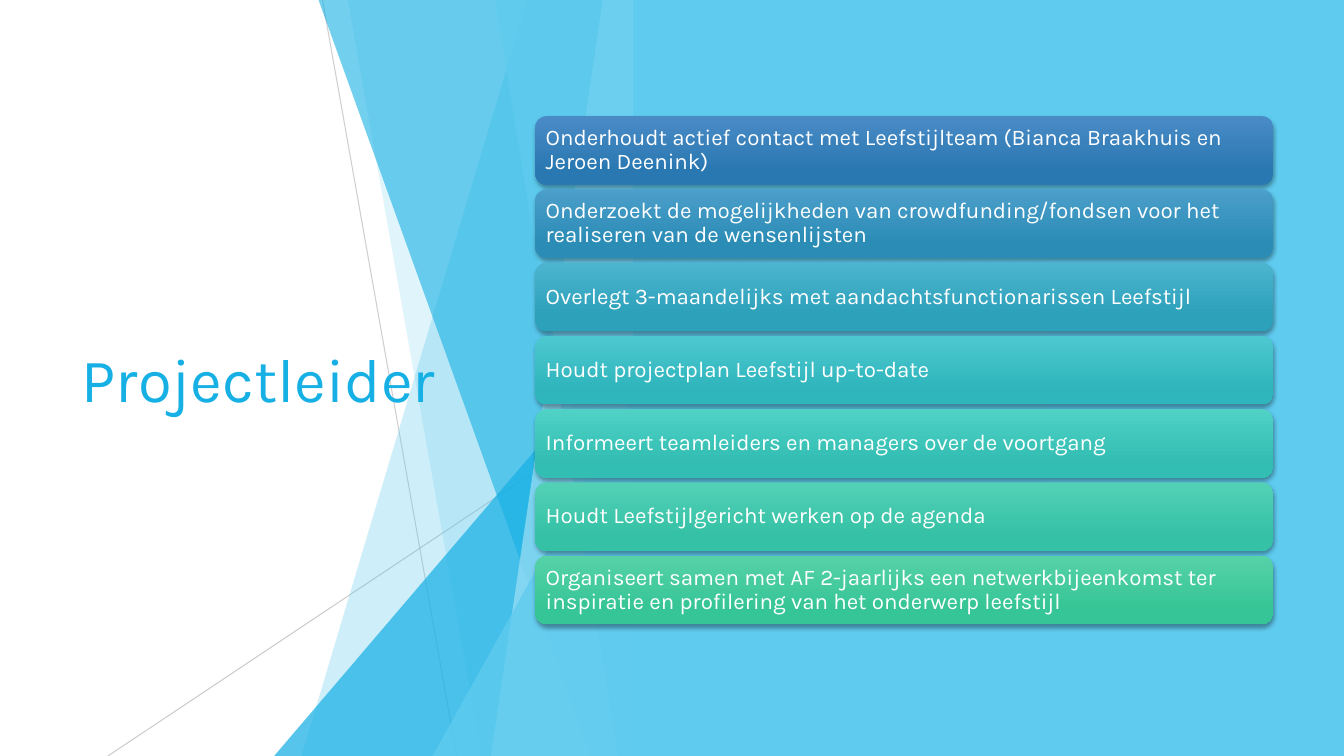
from dataclasses import dataclass

from lxml.etree import SubElement
from pptx import Presentation
from pptx.dml.color import RGBColor
from pptx.enum.shapes import MSO_CONNECTOR, MSO_SHAPE
from pptx.enum.text import MSO_ANCHOR, MSO_AUTO_SIZE, PP_ALIGN
from pptx.oxml.ns import qn
from pptx.shapes.autoshape import Shape
from pptx.shapes.base import BaseShape
from pptx.slide import Slide
from pptx.text.text import TextFrame
from pptx.util import Inches, Pt

SLIDE_WIDTH, SLIDE_HEIGHT = Inches(13.333), Inches(7.5)
FACET_EDGE = 47.1


@dataclass(frozen=True)
class Theme:
    font: str = "Karla"
    title_size: int = 44
    duty_size: int = 16
    hairline: float = 0.75
    sky: str = "5FCBEF"
    azure: str = "17B0E4"
    mist: str = "9FE0F5"
    silver: str = "BFBFBF"
    white: str = "FFFFFF"
    shade: str = "000000"


THEME = Theme()


def column(percent: float) -> int:
    return round(SLIDE_WIDTH * percent / 100)


def row(percent: float) -> int:
    return round(SLIDE_HEIGHT * percent / 100)


def rgb(color: str) -> RGBColor:
    return RGBColor.from_string(color)


def set_opacity(shape: BaseShape, percent: int) -> None:
    for color in shape.element.spPr.iter(qn("a:srgbClr")):
        SubElement(color, qn("a:alpha"), val=str(percent * 1000))


def paint(shape: Shape, color: str, opacity: int = 100) -> None:
    shape.shadow.inherit = False
    shape.line.fill.background()
    shape.fill.solid()
    shape.fill.fore_color.rgb = rgb(color)
    if opacity < 100:
        set_opacity(shape, opacity)


@dataclass(frozen=True)
class Ray:
    start: tuple[float, float]
    end: tuple[float, float]
    opacity: int

    def draw(self, slide: Slide) -> None:
        ray = slide.shapes.add_connector(
            MSO_CONNECTOR.STRAIGHT,
            column(self.start[0]), row(self.start[1]),
            column(self.end[0]), row(self.end[1]),
        )
        ray.line.color.rgb = rgb(THEME.silver)
        ray.line.width = Pt(THEME.hairline)
        set_opacity(ray, self.opacity)
        SubElement(ray.element.spPr, qn("a:effectLst"))


@dataclass(frozen=True)
class Facet:
    top: float
    foot: float
    color: str
    opacity: int

    def draw(self, slide: Slide) -> None:
        outline = slide.shapes.build_freeform(column(self.top), 0, 1.0)
        outline.add_line_segments([
            (column(FACET_EDGE), 0),
            (column(FACET_EDGE), SLIDE_HEIGHT),
            (column(self.foot), SLIDE_HEIGHT),
        ])
        paint(outline.convert_to_shape(), self.color, self.opacity)


@dataclass(frozen=True)
class Peak:
    foot: float
    apex: float
    color: str
    opacity: int

    def draw(self, slide: Slide) -> None:
        peak = slide.shapes.add_shape(
            MSO_SHAPE.ISOSCELES_TRIANGLE, column(self.foot), row(self.apex),
            column(FACET_EDGE - self.foot), row(100 - self.apex),
        )
        peak.adjustments[0] = 1
        paint(peak, self.color, self.opacity)


@dataclass(frozen=True)
class Duty:
    text: str
    light: str
    deep: str


BACKDROP = [
    Ray((24, 0), (33.98, 100), 75),
    Ray((FACET_EDGE, 53.73), (8.03, 100), 80),
    Facet(39.23, 22.43, THEME.sky, 30),
    Facet(25.88, 35.85, THEME.sky, 20),
    Peak(20.4, 44.4, THEME.azure, 72),
    Facet(23.7, 43.95, THEME.azure, 60),
    Facet(44.85, 36.53, THEME.mist, 70),
    Facet(36.83, 45.98, THEME.sky, 65),
    Peak(32.18, 52.4, THEME.sky, 80),
]

DUTIES = [
    Duty("Onderhoudt actief contact met Leefstijlteam (Bianca Braakhuis en Jeroen Deenink)", "4A8BC6", "2A78B2"),
    Duty("Onderzoekt de mogelijkheden van crowdfunding/fondsen voor het realiseren van de wensenlijsten", "4B9FCA", "2B8CB6"),
    Duty("Overlegt 3-maandelijks met aandachtsfunctionarissen Leefstijl", "4CB4CE", "2DA1BA"),
    Duty("Houdt projectplan Leefstijl up-to-date", "4DC8D0", "2FB5BC"),
    Duty("Informeert teamleiders en managers over de voortgang", "50D1C6", "33BEB3"),
    Duty("Houdt Leefstijlgericht werken op de agenda", "53D1B6", "35C1A5"),
    Duty("Organiseert samen met AF 2-jaarlijks een netwerkbijeenkomst ter inspiratie en profilering van het onderwerp leefstijl", "56D2A7", "36C596"),
]
DUTY_LEFT, DUTY_TOP, DUTY_WIDTH, DUTY_HEIGHT = 39.83, 15.36, 54.9, 9.07
DUTY_PITCH = 9.69


def write(frame: TextFrame, text: str, size: int, color: str) -> None:
    frame.text = text
    frame.word_wrap = True
    frame.auto_size = MSO_AUTO_SIZE.NONE
    frame.vertical_anchor = MSO_ANCHOR.MIDDLE
    paragraph = frame.paragraphs[0]
    paragraph.alignment = PP_ALIGN.LEFT
    for run in paragraph.runs:
        run.font.name = THEME.font
        run.font.size = Pt(size)
        run.font.color.rgb = rgb(color)


def place_title(slide: Slide, text: str) -> None:
    title = slide.shapes.title
    title.left, title.top = column(5.33), row(20.13)
    title.width, title.height = column(29.1), row(59.73)
    write(title.text_frame, text, THEME.title_size, THEME.azure)
    title.element.getparent().append(title.element)


def draw_panel(slide: Slide) -> None:
    panel = slide.shapes.add_shape(
        MSO_SHAPE.RECTANGLE, column(FACET_EDGE), 0, column(100 - FACET_EDGE), SLIDE_HEIGHT
    )
    paint(panel, THEME.sky)


def cast_shadow(shape: Shape) -> None:
    shape.shadow.inherit = False
    effects = shape.element.spPr.find(qn("a:effectLst"))
    shadow = SubElement(
        effects, qn("a:outerShdw"), blurRad=str(Pt(3)), dist=str(Pt(2)), dir="5400000", rotWithShape="0"
    )
    color = SubElement(shadow, qn("a:srgbClr"), val=THEME.shade)
    SubElement(color, qn("a:alpha"), val="35000")


def draw_duty(slide: Slide, duty: Duty, index: int) -> None:
    card = slide.shapes.add_shape(
        MSO_SHAPE.ROUNDED_RECTANGLE, column(DUTY_LEFT), row(DUTY_TOP + index * DUTY_PITCH),
        column(DUTY_WIDTH), row(DUTY_HEIGHT),
    )
    card.line.fill.background()
    card.fill.gradient()
    card.fill.gradient_angle = 270
    for stop, color, position in zip(card.fill.gradient_stops, (duty.light, duty.deep), (0, 0.78)):
        stop.color.rgb = rgb(color)
        stop.position = position
    cast_shadow(card)
    frame = card.text_frame
    write(frame, duty.text, THEME.duty_size, THEME.white)
    frame.paragraphs[0].line_spacing = 0.9
    frame.margin_left = frame.margin_right = Inches(0.07)


def main() -> None:
    presentation = Presentation()
    presentation.slide_width, presentation.slide_height = SLIDE_WIDTH, SLIDE_HEIGHT
    slide = presentation.slides.add_slide(presentation.slide_layouts[5])
    for part in BACKDROP:
        part.draw(slide)
    place_title(slide, "Projectleider")
    draw_panel(slide)
    for index, duty in enumerate(DUTIES):
        draw_duty(slide, duty, index)
    presentation.save("out.pptx")


if __name__ == "__main__":
    main()
